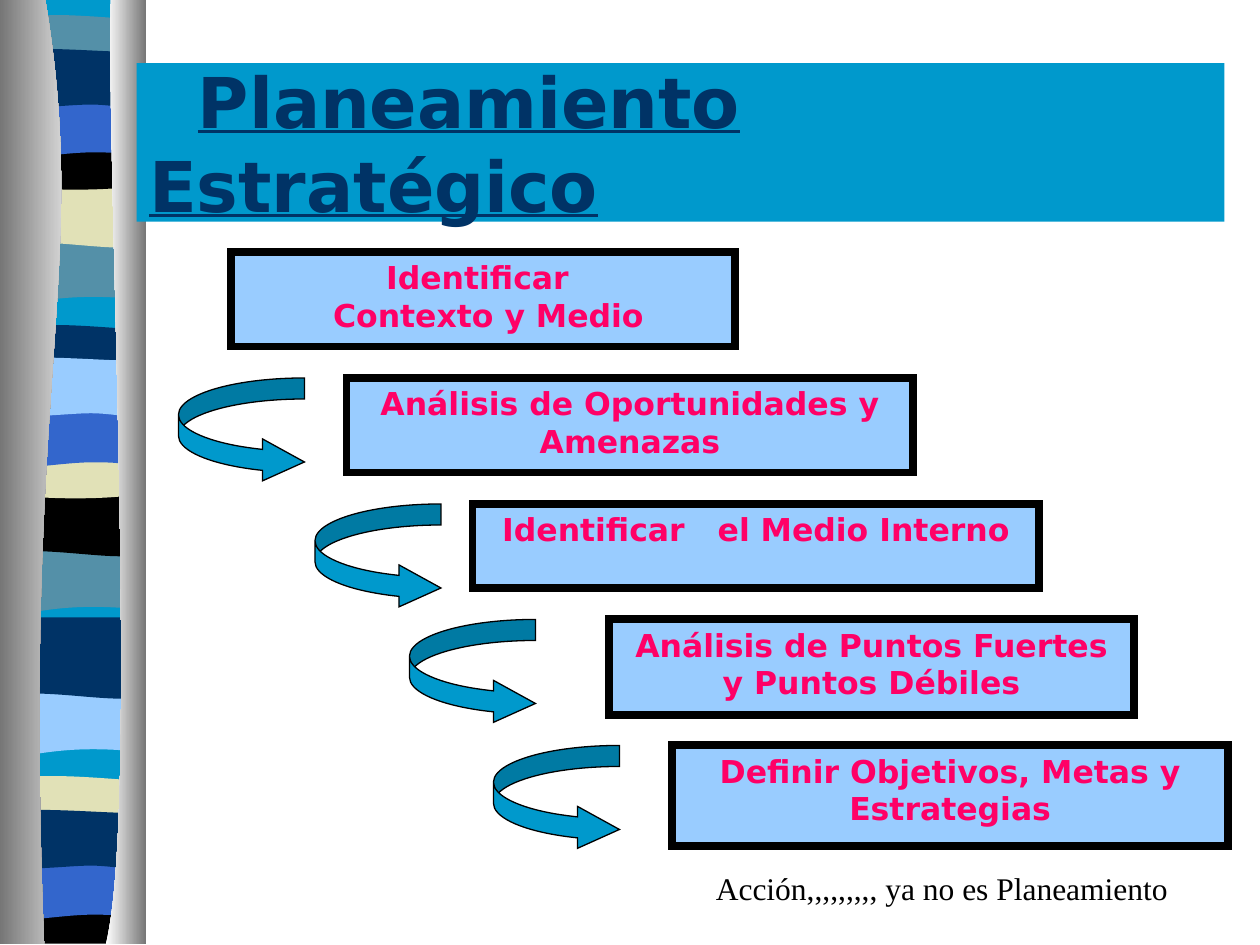
"""Build the strategic planning staircase slide with its ribbon border."""
from lxml import etree
from pptx import Presentation
from pptx.dml.color import RGBColor
from pptx.enum.shapes import MSO_SHAPE
from pptx.enum.text import MSO_ANCHOR, MSO_AUTO_SIZE, PP_ALIGN
from pptx.oxml.ns import qn
from pptx.util import Inches, Pt

RECTANGLE, CURVED_ARROW = MSO_SHAPE.RECTANGLE, MSO_SHAPE.CURVED_RIGHT_ARROW
TOP, MIDDLE = MSO_ANCHOR.TOP, MSO_ANCHOR.MIDDLE
LEFT, CENTER = PP_ALIGN.LEFT, PP_ALIGN.CENTER
NO_AUTOFIT = MSO_AUTO_SIZE.NONE

CYAN = RGBColor(0x00, 0x99, 0xCC)
TEAL = RGBColor(0x54, 0x90, 0xA8)
CREAM = RGBColor(0xE1, 0xE1, 0xB7)
BLUE = RGBColor(0x33, 0x66, 0xCC)
NAVY = RGBColor(0x00, 0x33, 0x66)
SKY = RGBColor(0x99, 0xCC, 0xFF)
PINK = RGBColor(0xFF, 0x00, 0x66)
GREY = RGBColor(0x76, 0x76, 0x76)
BLACK = RGBColor(0, 0, 0)
WHITE = RGBColor(0xFF, 0xFF, 0xFF)
SANS, SERIF = "DejaVu Sans", "Times New Roman"

WIDTH, HEIGHT = 10, 7.5
CELL = WIDTH / 120
TITLE = [[("  ", False), ("Planeamiento Estratégico", True), (" ", False)]]
TITLE_PLACE = (13, 6, 103.6, 15.12)
STEPS = [
    (["Identificar ", " Contexto y Medio"], (22, 24, 48, 9)),
    (["Análisis de Oportunidades y Amenazas"], (33, 36, 54, 9)),
    (["Identificar   el Medio Interno"], (45, 48, 54, 8)),
    (["Análisis de Puntos Fuertes y Puntos Débiles"], (58, 59, 50, 9.1)),
    (["Definir Objetivos, Metas y Estrategias"], (64, 71, 53, 9.6)),
]
ARROW_COLUMNS = [17, 30, 39, 47]
ARROW_SIZE = (12, 10)
ARROW_BENDS = (0.2, 0.4, 0.4)
NOTE = ["Acción,,,,,,,,, ya no es Planeamiento"]
NOTE_PLACE = (67, 82.2, 48, 4.8)

RIBBON_LEFT = 0.05
BAND = 1.09
SWEEP = [(BAND, -.09), (BAND, .53), (.34, .45, .19, .61, 0, .53), (0, -.09)]
DIP = [(BAND, -.09), (BAND, .53), (.91, .61, .34, .47, 0, .53), (0, -.09)]
STRIPE = [(BAND, -.05), (BAND, .3), (.91, .35, .19, .35, 0, .3), (0, -.05),
          (.07, -.1, .24, -.09, .42, -.09), (.6, -.09, .95, -.06, BAND, -.05)]
HOLLOW = [(BAND, -.05), (BAND, .38), (.91, .44, .19, .44, 0, .38), (0, -.05),
          (.67, 0, .86, -.05, BAND, -.05)]
ARCH = [(BAND, -.05), (BAND, .52), (.92, .47, .85, .47, .67, .47),
        (.49, .47, .17, .52, 0, .52), (0, -.05)]
SWELL = [(BAND, -.05), (BAND, .37), (1.02, .42, .85, .37, .67, .37),
         (.49, .37, .12, .42, 0, .37), (0, -.05),
         (.16, -.1, .74, -.05, .92, -.05), (BAND, -.05)]
FOOT = [(BAND, 0), (BAND, .37), (0, .37), (0, 0), (.67, .05, .86, 0, BAND, 0)]
BACKING = [(BAND, 0), (BAND, 7.48), (0, 7.48), (0, 0)]
BANDS = [
    (BACKING, 0, CYAN),
    (SWEEP, 1.85, TEAL), (DIP, 1.41, CREAM), (STRIPE, .21, TEAL),
    (HOLLOW, 1.08, BLACK), (ARCH, .74, BLUE), (SWELL, .46, NAVY),
    (SWEEP, 4.31, TEAL), (DIP, 3.86, BLACK), (STRIPE, 2.67, NAVY),
    (HOLLOW, 3.53, CREAM), (ARCH, 3.2, BLUE), (SWELL, 2.91, SKY),
    (SWEEP, 5.44, SKY), (DIP, 4.99, NAVY), (STRIPE, 6.25, CREAM),
    (FOOT, 7.12, BLACK), (ARCH, 6.79, BLUE), (SWELL, 6.5, NAVY),
]
CURTAINS = [
    ([(.36, 0), (.72, 2.16, .17, 2.96, .35, 7.49), (0, 7.49), (0, 0)], (GREY, WHITE)),
    ([(.88, 0), (.84, 1.25, 1.11, 6.46, .84, 7.49), (1.16, 7.49), (1.16, 0)], (WHITE, GREY)),
]


def on_grid(*cells):
    return [Inches(cell * CELL) for cell in cells]


def add_outline(ribbon, outline, left=0, top=0):
    """Draw an outline whose pairs are corners and sextuples cubic curves."""
    points = [(Inches(left + piece[i]), Inches(top + piece[i + 1]))
              for piece in outline for i in range(0, len(piece), 2)]
    builder = ribbon.shapes.build_freeform(*points[0])
    builder.add_line_segments(points[1:], close=True)
    shape = builder.convert_to_shape()
    segments = iter(list(shape.element.iter(qn("a:lnTo"))))
    for piece in outline[1:]:
        segment = next(segments)
        if len(piece) == 6:
            segment.tag = qn("a:cubicBezTo")
            for extra in (next(segments), next(segments)):
                segment.append(extra[0])
                extra.getparent().remove(extra)
    shape.shadow.inherit = False
    shape.line.fill.background()
    return shape


def add_ribbon(slide, master):
    ribbon = slide.shapes.add_group_shape()
    for outline, top, color in BANDS:
        band = add_outline(ribbon, outline, RIBBON_LEFT, top)
        band.fill.solid()
        band.fill.fore_color.rgb = color
    for outline, shades in CURTAINS:
        curtain = add_outline(ribbon, outline)
        curtain.fill.gradient()
        curtain.fill.gradient_angle = 0
        for stop, shade in zip(curtain.fill.gradient_stops, shades):
            stop.color.rgb = shade
    master.shapes[0].element.addprevious(ribbon.element)


def write(holder, paragraphs, size=18, font=SANS, color=PINK, bold=True,
          align=CENTER, anchor=TOP):
    frame = holder.text_frame
    frame.word_wrap = True
    frame.auto_size = NO_AUTOFIT
    frame.vertical_anchor = anchor
    for index, content in enumerate(paragraphs):
        paragraph = frame.add_paragraph() if index else frame.paragraphs[0]
        paragraph.alignment = align
        for text, underline in [(content, False)] if isinstance(content, str) else content:
            run = paragraph.add_run()
            run.text = text
            run.font.size = Pt(size)
            run.font.name = font
            run.font.bold = bold
            run.font.underline = underline
            run.font.color.rgb = color


def add_block(slide, kind, place, fill, line_width):
    block = slide.shapes.add_shape(kind, *on_grid(*place))
    block.shadow.inherit = False
    block.fill.solid()
    block.fill.fore_color.rgb = fill
    block.line.color.rgb = BLACK
    block.line.width = Pt(line_width)
    outline = block.element.find(".//" + qn("a:ln"))
    etree.SubElement(outline, qn("a:miter"), lim="800000")
    return block


def main():
    deck = Presentation()
    deck.slide_width, deck.slide_height = Inches(WIDTH), Inches(HEIGHT)
    slide = deck.slides.add_slide(deck.slide_layouts[5])
    add_ribbon(slide, deck.slide_master)

    title = slide.shapes.title
    title.left, title.top, title.width, title.height = on_grid(*TITLE_PLACE)
    title.fill.solid()
    title.fill.fore_color.rgb = CYAN
    write(title, TITLE, size=40, color=NAVY, align=LEFT, anchor=MIDDLE)

    for lines, place in STEPS:
        write(add_block(slide, RECTANGLE, place, SKY, 4.5), lines)
    for column, (_, place) in zip(ARROW_COLUMNS, STEPS[1:]):
        arrow = add_block(slide, CURVED_ARROW, (column, place[1], *ARROW_SIZE), CYAN, 0.75)
        for index, bend in enumerate(ARROW_BENDS):
            arrow.adjustments[index] = bend

    note = slide.shapes.add_textbox(*on_grid(*NOTE_PLACE))
    write(note, NOTE, font=SERIF, color=BLACK, bold=False, align=LEFT)
    deck.save("out.pptx")


if __name__ == "__main__":
    main()
